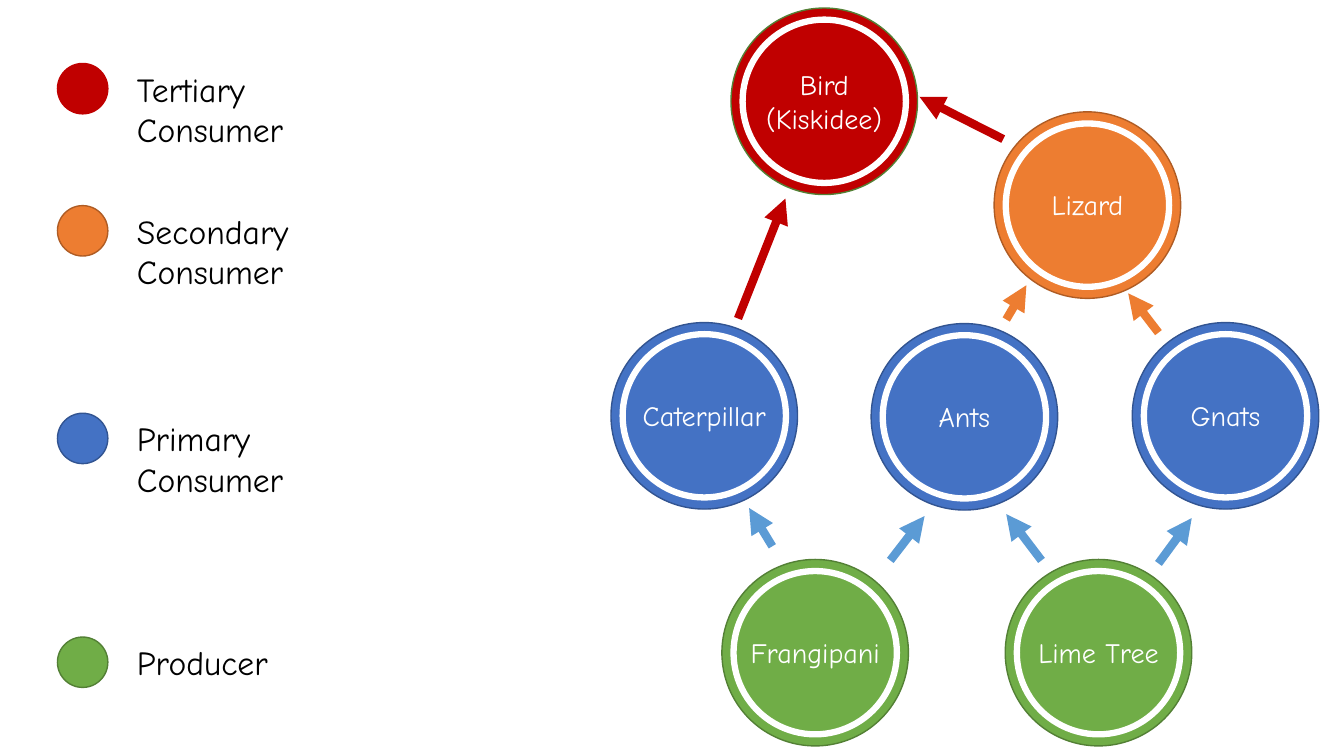
import pptx
import pptx.util
import pptx.dml.color
import pptx.enum.shapes
import pptx.enum.text
import pptx.oxml
import pptx.oxml.ns

Inches, Pt = pptx.util.Inches, pptx.util.Pt
RGB = pptx.dml.color.RGBColor.from_string
PP_ALIGN = pptx.enum.text.PP_ALIGN

COLOURS = {
    "producer": "70AD47", "producer edge": "538035",
    "primary": "4472C4", "primary edge": "325491",
    "secondary": "ED7D31", "secondary edge": "AF5C24",
    "tertiary": "C00000", "tertiary edge": "C00000",
    "energy": "5B9BD5", "white": "FFFFFF", "black": "000000",
}
FONT = "Comic Neue"
DISC, RING, DOT = 1.85, 1.62, 0.5
INSET = (DISC - RING) / 2

deck = pptx.Presentation()
deck.slide_width, deck.slide_height = Inches(13.33), Inches(7.5)
page = deck.slides.add_slide(deck.slide_layouts[6])


def add_circle(shapes, left, top, size, fill, edge, weight):
    circle = shapes.add_shape(pptx.enum.shapes.MSO_SHAPE.OVAL, Inches(left),
                              Inches(top), Inches(size), Inches(size))
    circle.shadow.inherit = False
    if fill:
        circle.fill.solid()
        circle.fill.fore_color.rgb = RGB(COLOURS[fill])
    else:
        circle.fill.background()
    circle.line.color.rgb = RGB(COLOURS[edge])
    circle.line.width = Pt(weight)


def add_label(text, left, top, width, height, size, colour, align):
    box = page.shapes.add_textbox(Inches(left), Inches(top), Inches(width), Inches(height))
    frame = box.text_frame
    frame.word_wrap = True
    frame.auto_size = pptx.enum.text.MSO_AUTO_SIZE.SHAPE_TO_FIT_TEXT
    frame.text = text
    for para in frame.paragraphs:
        para.alignment = align
        for span in para.runs:
            span.font.name, span.font.size = FONT, Pt(size)
            span.font.color.rgb = RGB(COLOURS[colour])


# Organisms: name, level, edge, left and top of the disc
organisms = [
    ("Frangipani", "producer", "producer edge", 7.16, 5.55),
    ("Lime Tree", "producer", "producer edge", 9.97, 5.55),
    ("Caterpillar", "primary", "primary edge", 6.06, 3.2),
    ("Ants", "primary", "primary edge", 8.64, 3.21),
    ("Gnats", "primary", "primary edge", 11.23, 3.2),
    ("Bird\n(Kiskidee)", "tertiary", "producer edge", 7.25, 0.08),
    ("Lizard", "secondary", "secondary edge", 9.86, 1.11),
]
for name, level, edge, left, top in organisms:
    disc = page.shapes.add_group_shape()
    add_circle(disc.shapes, left, top, DISC, level, edge, 1)
    add_circle(disc.shapes, left + INSET, top + INSET, RING, None, "white", 4.5)
    height = 0.77 if "\n" in name else 0.44
    add_label(name, left + INSET, top + (DISC - height) / 2, RING, height,
              20, "white", PP_ALIGN.CENTER)

# Feeding arrows: colour, start and end
arrows = [
    ("energy", (7.66, 5.42), (7.43, 5.04)),
    ("energy", (8.83, 5.56), (9.17, 5.12)),
    ("energy", (10.33, 5.56), (9.98, 5.1)),
    ("energy", (11.49, 5.59), (11.82, 5.14)),
    ("secondary", (11.49, 3.3), (11.19, 2.91)),
    ("secondary", (9.98, 3.17), (10.18, 2.83)),
    ("tertiary", (7.32, 3.16), (7.79, 1.97)),
    ("tertiary", (9.95, 1.38), (9.12, 0.96)),
]
for colour, start, end in arrows:
    arrow = page.shapes.add_connector(pptx.enum.shapes.MSO_CONNECTOR.STRAIGHT,
                                      *map(Inches, start + end))
    arrow.line.color.rgb = RGB(COLOURS[colour])
    arrow.line.width = Pt(6)
    head = pptx.oxml.parse_xml(
        f'<a:tailEnd {pptx.oxml.ns.nsdecls("a")} type="triangle"/>')
    arrow.line._get_or_add_ln().append(head)
    no_shadow = pptx.oxml.parse_xml(f'<a:effectLst {pptx.oxml.ns.nsdecls("a")}/>')
    arrow._element.spPr.append(no_shadow)

# Legend: text, level, top and text height
legend = [
    ("Producer", "producer", 6.32, 0.5),
    ("Primary Consumer", "primary", 4.1, 0.91),
    ("Secondary Consumer", "secondary", 2.04, 0.91),
    ("Tertiary Consumer", "tertiary", 0.63, 0.91),
]
for text, level, top, height in legend:
    add_circle(page.shapes, 0.57, top, DOT, level, level + " edge", 1)
    add_label(text, 1.26, top, 1.93, height, 24, "black", PP_ALIGN.LEFT)

deck.save("out.pptx")
